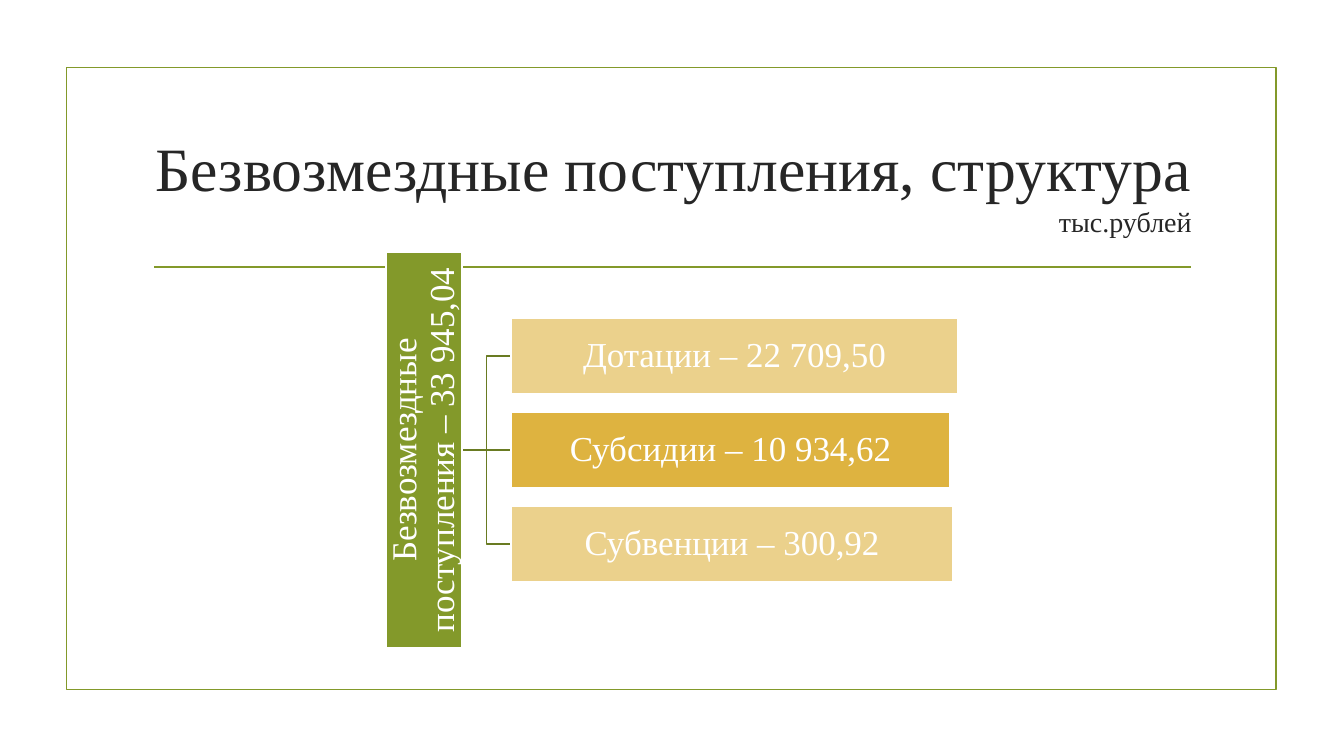
import pptx
import pptx.dml.color
import pptx.enum.shapes
import pptx.enum.text
import pptx.util
from lxml import etree
from pptx.oxml.ns import qn

# Content
TITLE = "Безвозмездные поступления, структура"
UNIT = "тыс.рублей"
TOTAL = "Безвозмездные поступления – 33 945,04"
PARTS = [  # text, width in px, colour
    ("Дотации – 22 709,50", 443, "sand"),
    ("Субсидии – 10 934,62", 435, "gold"),
    ("Субвенции – 300,92", 438, "sand"),
]
COLORS = {
    "green": "83992A", "olive": "697B22", "sand": "EBD18C",
    "gold": "DEB340", "white": "FFFFFF", "dark": "262626",
}

# Layout in px, 100 px to the inch
EMU_PER_PX = 9144
BOX_HEIGHT = 75
BOX_STEP = 93
PARTS_LEFT, PARTS_TOP = 507, 316
TOTAL_LENGTH, TOTAL_RIGHT = 393, 458
CENTER_Y = 446.5
LINE_WIDTH = pptx.util.Pt(1.25)


def px(length):
    return pptx.util.Emu(round(length * EMU_PER_PX))


def color(name):
    return pptx.dml.color.RGBColor.from_string(COLORS[name])


def format_font(font, size, name):
    values = {"size": pptx.util.Pt(size), "name": "Times New Roman", "bold": False}
    for key, value in values.items():
        setattr(font, key, value)
    font.color.rgb = color(name)


def format_frame(frame, margins):
    values = {
        "word_wrap": True,
        "auto_size": pptx.enum.text.MSO_AUTO_SIZE.NONE,
        "vertical_anchor": pptx.enum.text.MSO_ANCHOR.MIDDLE,
    }
    sides = ("margin_left", "margin_top", "margin_right", "margin_bottom")
    values.update(zip(sides, map(px, margins)))
    for key, value in values.items():
        setattr(frame, key, value)


def format_outline(shape, line, fill=None):
    shape.shadow.inherit = False
    if fill:
        shape.fill.solid()
        shape.fill.fore_color.rgb = color(fill)
    else:
        shape.fill.background()
    shape.line.color.rgb = color(line)
    shape.line.width = LINE_WIDTH


def add_box(left, top, width, height, line, fill=None):
    shape = slide.shapes.add_shape(
        pptx.enum.shapes.MSO_SHAPE.RECTANGLE, px(left), px(top), px(width), px(height))
    format_outline(shape, line, fill)
    return shape


def add_label(text, left, top, width, fill):
    shape = add_box(left, top, width, BOX_HEIGHT, "white", fill)
    format_frame(shape.text_frame, (2, 2, 2, 2))
    paragraph = shape.text_frame.paragraphs[0]
    paragraph.text = text
    paragraph.alignment = pptx.enum.text.PP_ALIGN.CENTER
    paragraph.line_spacing = 0.9
    format_font(paragraph.runs[0].font, 25, "white")
    return shape


def add_line(start, end, line):
    connector = slide.shapes.add_connector(
        pptx.enum.shapes.MSO_CONNECTOR.STRAIGHT, *map(px, start + end))
    connector.line.color.rgb = color(line)
    connector.line.width = LINE_WIDTH
    properties = connector._element.find(qn("p:spPr"))
    etree.SubElement(properties, qn("a:effectLst"))


presentation = pptx.Presentation()
presentation.slide_width, presentation.slide_height = px(1333), px(750)
slide = presentation.slides.add_slide(presentation.slide_layouts[5])

# Frame and rule
add_box(66, 67, 1200, 617, "green")
add_line((153, 265), (1181, 265), "green")

# Title
title = slide.shapes.title
for side, length in zip(("left", "top", "width", "height"), (142, 107, 1050, 143)):
    setattr(title, side, px(length))
format_frame(title.text_frame, (10, 13, 10, 5))
heading = title.text_frame.paragraphs[0]
heading.alignment = pptx.enum.text.PP_ALIGN.RIGHT
for text, size in ((TITLE, 44), (UNIT, 20)):
    if heading.runs:
        heading.add_line_break()
    run = heading.add_run()
    run.text = text
    format_font(run.font, size, "dark")

# Branches from the total to its parts
middle_x = (TOTAL_RIGHT + PARTS_LEFT) / 2
for index in range(len(PARTS)):
    branch_y = PARTS_TOP + index * BOX_STEP + BOX_HEIGHT / 2
    if branch_y == CENTER_Y:
        add_line((TOTAL_RIGHT, CENTER_Y), (PARTS_LEFT, CENTER_Y), "olive")
        continue
    builder = slide.shapes.build_freeform(px(TOTAL_RIGHT), px(CENTER_Y))
    corners = [(middle_x, CENTER_Y), (middle_x, branch_y), (PARTS_LEFT, branch_y)]
    builder.add_line_segments([(px(x), px(y)) for x, y in corners], close=False)
    format_outline(builder.convert_to_shape(), "olive")

# Total, turned upright
total_left = TOTAL_RIGHT - (TOTAL_LENGTH + BOX_HEIGHT) / 2
total = add_label(TOTAL, total_left, CENTER_Y - BOX_HEIGHT / 2, TOTAL_LENGTH, "green")
total.rotation = 270

# Parts
for index, (text, width, fill) in enumerate(PARTS):
    add_label(text, PARTS_LEFT, PARTS_TOP + index * BOX_STEP, width, fill)

presentation.save("out.pptx")
